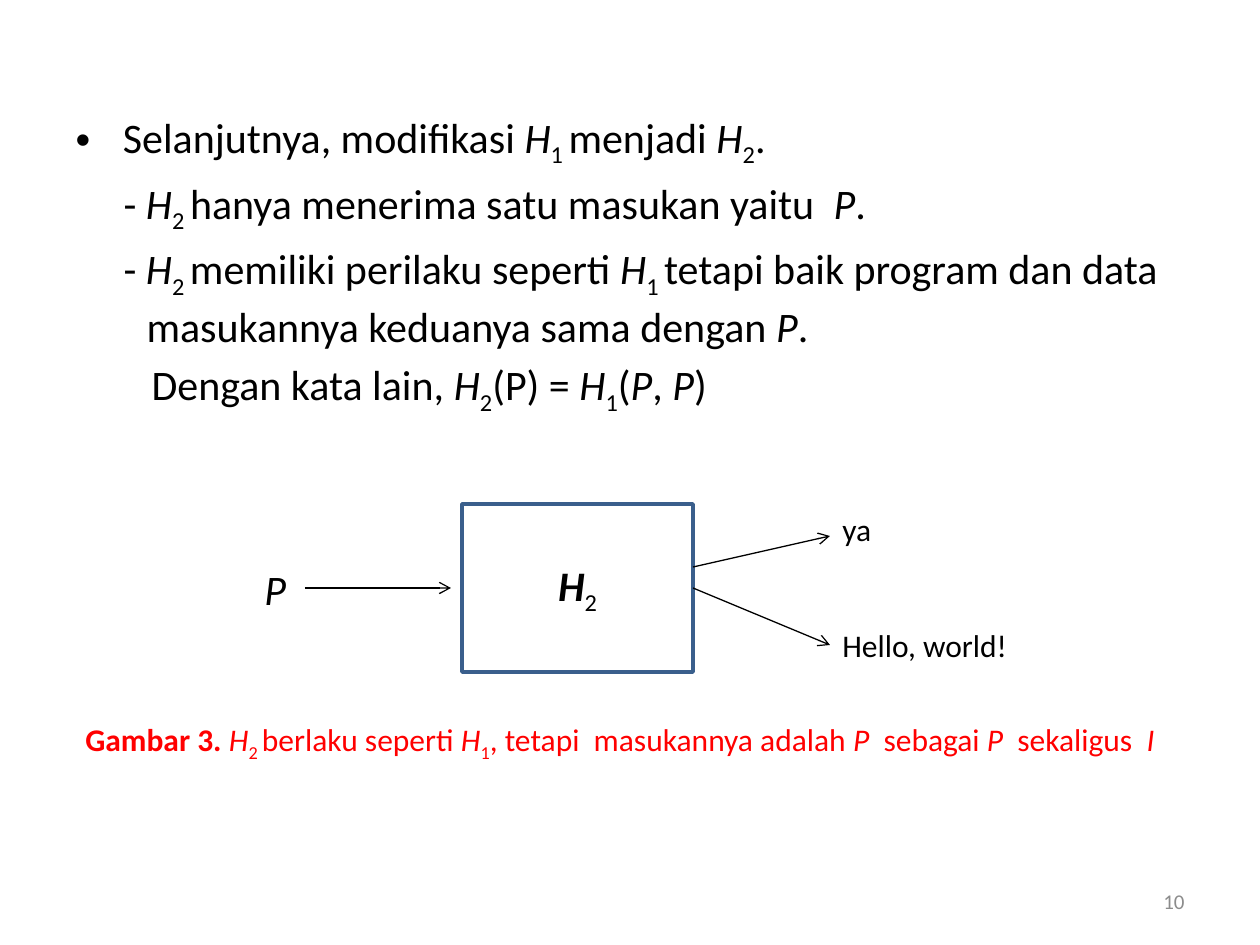
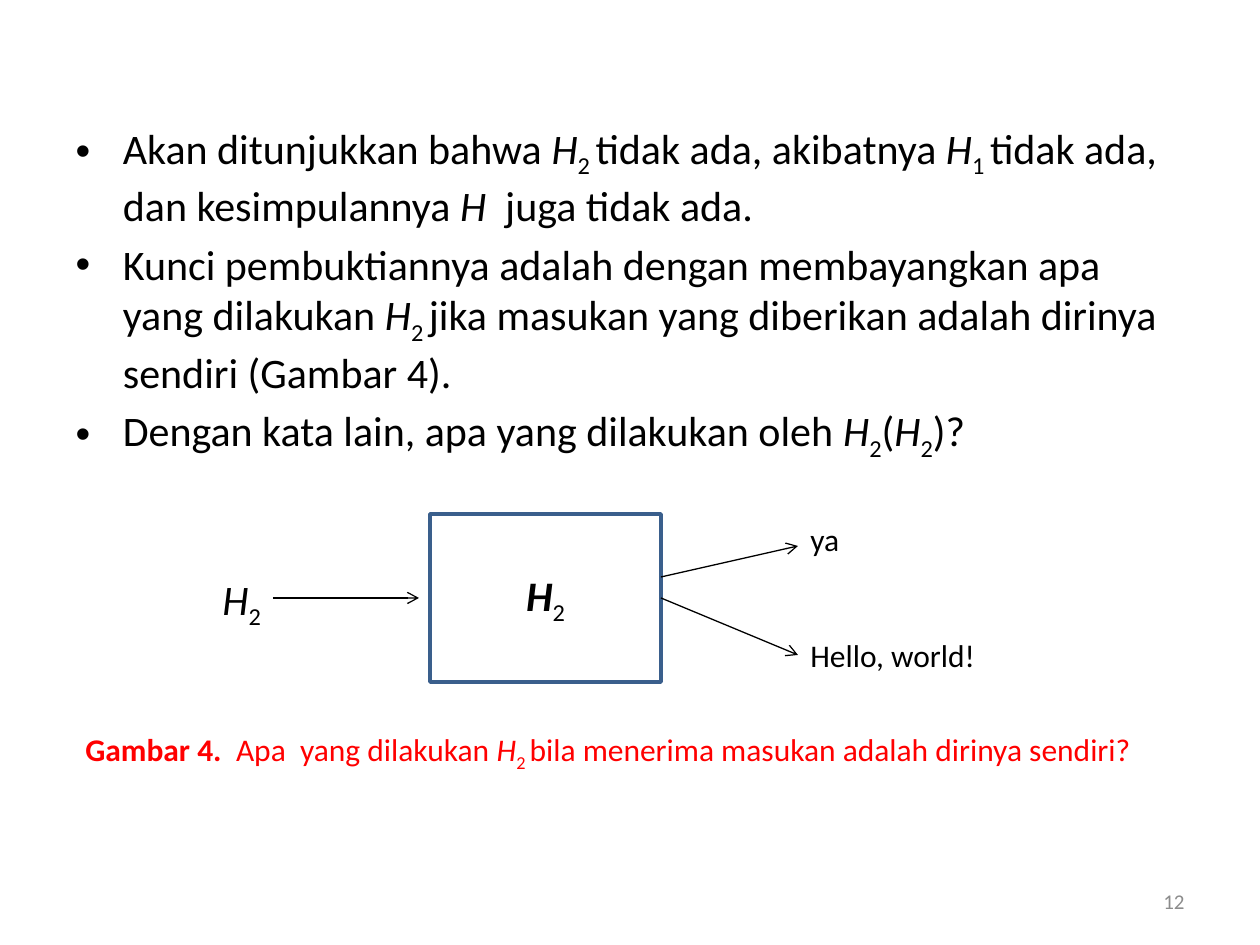
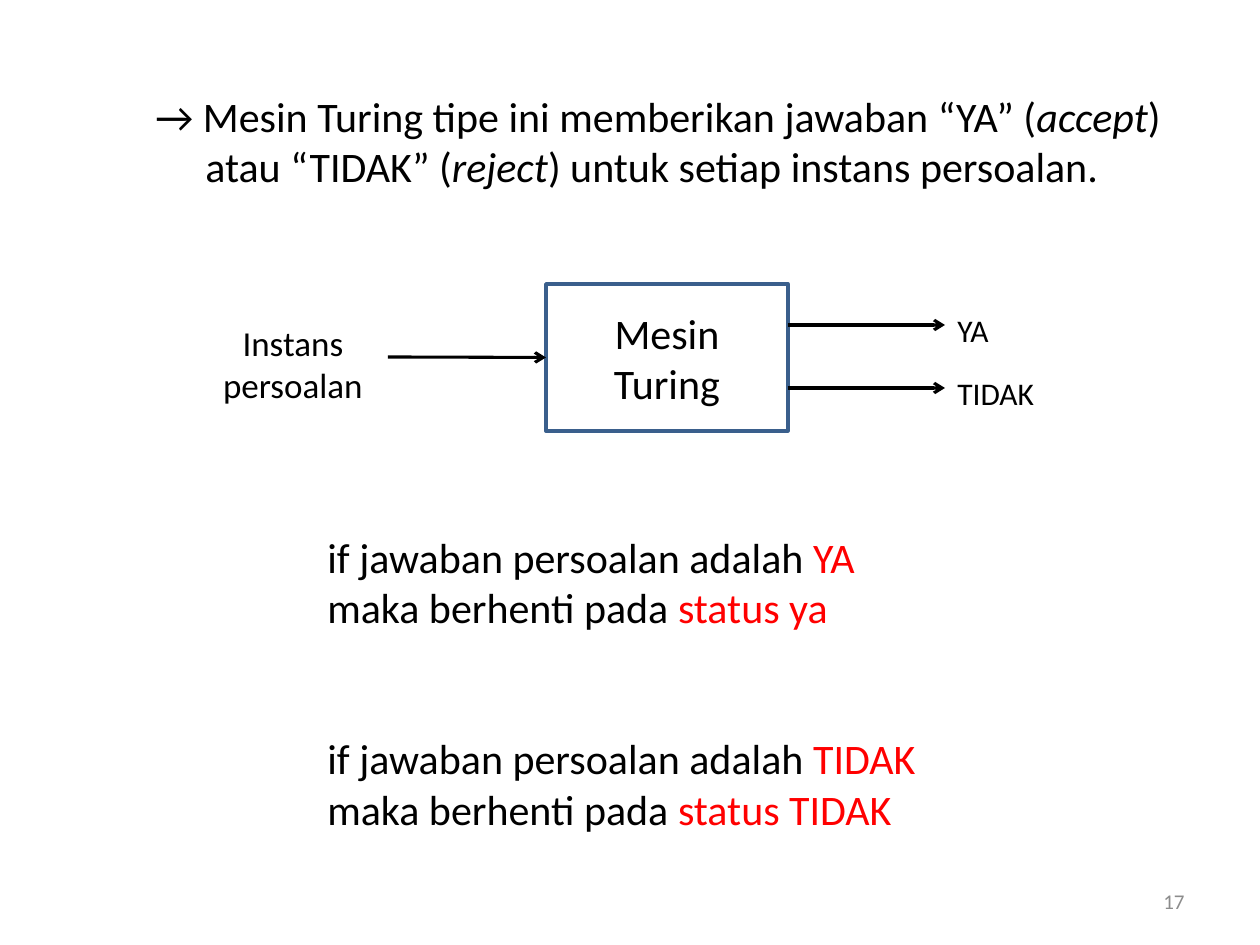
from pptx import Presentation
from pptx.dml.color import RGBColor
from pptx.enum.shapes import MSO_CONNECTOR as Connector, MSO_SHAPE as Shape
from pptx.enum.text import MSO_ANCHOR as Anchor, MSO_AUTO_SIZE as AutoSize, PP_ALIGN as Align
from pptx.oxml.ns import qn
from pptx.util import Emu, Pt
from lxml.etree import SubElement

PX_PER_INCH = 126
FONT = "Calibri"
BLACK, RED, GREY, BOX_BLUE = "000000", "FF0000", "8C8C8C", "3A5F8C"
TITLE_AND_CONTENT, BLANK = 1, 6


def px(length):
    return Emu(round(length * 914400 / PX_PER_INCH))


def color(hex_text):
    return RGBColor.from_string(hex_text)


def italic(text):
    return text, "italic"


def bold(text):
    return text, "bold"


def sub(text):
    return text, "sub"


def red(text):
    return text, "red"


H = italic("H")
P = italic("P")


def add_runs(paragraph, runs, size, ink=BLACK):
    for item in runs:
        text, *styles = (item,) if isinstance(item, str) else item
        run = paragraph.add_run()
        run.text = text
        font = run.font
        font.name, font.size = FONT, Pt(size)
        font.color.rgb = color(RED if "red" in styles else ink)
        if "italic" in styles:
            font.italic = True
        if "bold" in styles:
            font.bold = True
        if "sub" in styles:
            run._r.get_or_add_rPr().set("baseline", "-25000")


def add_lines(frame, lines, size, ink=BLACK, align=None):
    paragraphs = []
    for index, runs in enumerate(lines):
        paragraph = frame.add_paragraph() if index else frame.paragraphs[0]
        if align is not None:
            paragraph.alignment = align
        add_runs(paragraph, runs, size, ink)
        paragraphs.append(paragraph)
    return paragraphs


def set_indent(paragraph, margin, first_line=0):
    properties = paragraph._p.get_or_add_pPr()
    properties.set("marL", str(px(margin)))
    properties.set("indent", str(px(first_line)))


def remove_bullet(paragraph):
    SubElement(paragraph._p.get_or_add_pPr(), qn("a:buNone"))


def add_text(slide, x, y, width, height, lines, size, ink=BLACK, align=None, wrap=False):
    label = slide.shapes.add_textbox(px(x), px(y), px(width), px(height))
    label.text_frame.word_wrap = wrap
    label.text_frame.auto_size = AutoSize.SHAPE_TO_FIT_TEXT
    return add_lines(label.text_frame, lines, size, ink, align)


def add_page_number(slide, number):
    holder = slide.shapes.add_textbox(px(903), px(876), px(294), px(50))
    holder.text_frame.word_wrap = True
    holder.text_frame.vertical_anchor = Anchor.MIDDLE
    add_lines(holder.text_frame, [[str(number)]], 12, GREY, Align.RIGHT)


def add_body(slide, y, lines):
    body = slide.placeholders[1]
    body.left, body.top, body.width, body.height = px(63), px(y), px(1134), px(844 - y)
    body.text_frame.auto_size = AutoSize.NONE
    paragraphs = add_lines(body.text_frame, lines, 24)
    paragraphs[0].space_before = Pt(0)
    return paragraphs


def add_machine(slide, x, y, width, height, runs):
    machine = slide.shapes.add_shape(Shape.RECTANGLE, px(x), px(y), px(width), px(height))
    machine.shadow.inherit = False
    machine.fill.background()
    machine.line.color.rgb = color(BOX_BLUE)
    machine.line.width = Pt(2)
    machine.text_frame.word_wrap = True
    machine.text_frame.vertical_anchor = Anchor.MIDDLE
    add_lines(machine.text_frame, [runs], 24, align=Align.CENTER)
    return machine


def add_arrow(slide, x1, y1, x2, y2, weight=0.75):
    arrow = slide.shapes.add_connector(Connector.STRAIGHT, px(x1), px(y1), px(x2), px(y2))
    arrow.line.color.rgb = color(BLACK)
    arrow.line.width = Pt(weight)
    properties = arrow._element.spPr
    SubElement(properties.find(qn("a:ln")), qn("a:tailEnd"), type="arrow")
    SubElement(properties, qn("a:effectLst"))
    return arrow


def add_h2_diagram(slide, x, y, input_runs, input_x, input_width, caption, caption_width):
    width, height = 231, 168
    right, middle = x + width, y + height // 2
    output_x = x + 368
    machine = add_machine(slide, x, y, width, height, [("H", "bold", "italic"), sub("2")])
    add_text(slide, input_x, y + 53, input_width, 63, [input_runs], 24)
    add_arrow(slide, x - 157, middle, x - 11, middle)
    add_text(slide, output_x, y, 54, 50, [["ya"]], 18)
    add_text(slide, output_x, y + 116, 192, 50, [["Hello, world!"]], 18)
    add_arrow(slide, right, y + 63, output_x, y + 32)
    hello_arrow = add_arrow(slide, right, middle, output_x, y + 141)
    hello_arrow.begin_connect(machine, 3)
    add_text(slide, 73, y + 210, caption_width, 50, [caption], 18, RED)


def new_slide(prs, layout, number):
    slide = prs.slides.add_slide(prs.slide_layouts[layout])
    title = slide.shapes.title
    if title is not None:
        title._element.getparent().remove(title._element)
    add_page_number(slide, number)
    return slide


def build_modified_program(prs):
    slide = new_slide(prs, TITLE_AND_CONTENT, 10)
    points = add_body(slide, 105, [
        ["Selanjutnya, modifikasi ", H, sub("1 "), "menjadi ", H, sub("2"), "."],
        ["- ", H, sub("2 "), "hanya menerima satu masukan yaitu  ", P, "."],
        ["- ", H, sub("2 "), "memiliki perilaku seperti ", H, sub("1 "),
         "tetapi baik program dan data masukannya keduanya sama dengan ", P, "."],
        ["Dengan kata lain, ", H, sub("2"), "(P) = ", H, sub("1"), "(", P, ", ", P, ")"],
    ])
    for point, (margin, first_line) in zip(points[1:], [(48, 0), (71, -23), (76, 0)]):
        set_indent(point, margin, first_line)
        remove_bullet(point)
    caption = [bold("Gambar 3. "), H, sub("2 "), "berlaku seperti ", H, sub("1"),
               ", tetapi  masukannya adalah ", italic("P  "), "sebagai ", italic("P  "),
               "sekaligus  ", italic("I")]
    add_h2_diagram(slide, 462, 504, [P], 252, 48, caption, 1113)


def build_self_input(prs):
    slide = new_slide(prs, TITLE_AND_CONTENT, 12)
    add_body(slide, 116, [
        ["Akan ditunjukkan bahwa ", H, sub("2 "), "tidak ada, akibatnya ", H, sub("1 "),
         "tidak ada, dan kesimpulannya ", italic("H  "), "juga tidak ada."],
        ["Kunci pembuktiannya adalah dengan membayangkan apa yang dilakukan ", H, sub("2 "),
         "jika masukan yang diberikan adalah dirinya sendiri (Gambar 4)."],
        ["Dengan kata lain, apa yang dilakukan oleh ", H, sub("2"), "(", H, sub("2"), ")?"],
    ])
    caption = [bold("Gambar 4.  "), "Apa  yang dilakukan ", H, sub("2 "),
               "bila menerima masukan adalah dirinya sendiri?"]
    add_h2_diagram(slide, 430, 514, [H, sub("2")], 210, 67, caption, 1094)


def build_turing_machine(prs):
    slide = new_slide(prs, BLANK, 17)
    machine = add_machine(slide, 546, 284, 242, 147, ["Mesin Turing"])
    input_arrow = add_arrow(slide, 388, 357, 546, 357, 1.75)
    input_arrow.end_connect(machine, 1)
    add_text(slide, 210, 315, 166, 97, [["Instans"], ["persoalan"]], 20, align=Align.CENTER)
    for y, answer, width in [(325, "YA", 57), (388, "TIDAK", 103)]:
        add_arrow(slide, 788, y, 945, y, 1.75)
        add_text(slide, 945, y - 20, width, 50, [[answer]], 18)

    statement = add_text(slide, 136, 84, 1061, 115, [
        ["→ Mesin Turing tipe ini memberikan jawaban “YA” (", italic("accept"), ")"],
        ["atau “TIDAK” (", italic("reject"), ") untuk setiap instans persoalan."],
    ], 24, wrap=True)
    for line, margin in zip(statement, [7, 57]):
        set_indent(line, margin)

    rules = []
    for answer, status in [("YA", "status ya"), ("TIDAK", "status TIDAK")]:
        rules += [["if jawaban persoalan adalah ", red(answer)],
                  ["maka berhenti pada ", red(status)]]
    rule_lines = add_text(slide, 315, 525, 630, 318, rules, 24, wrap=True)
    rule_lines[2].space_before = px(101)


def main():
    prs = Presentation()
    prs.slide_width, prs.slide_height = px(1260), px(945)
    build_modified_program(prs)
    build_self_input(prs)
    build_turing_machine(prs)
    prs.save("out.pptx")


if __name__ == "__main__":
    main()
